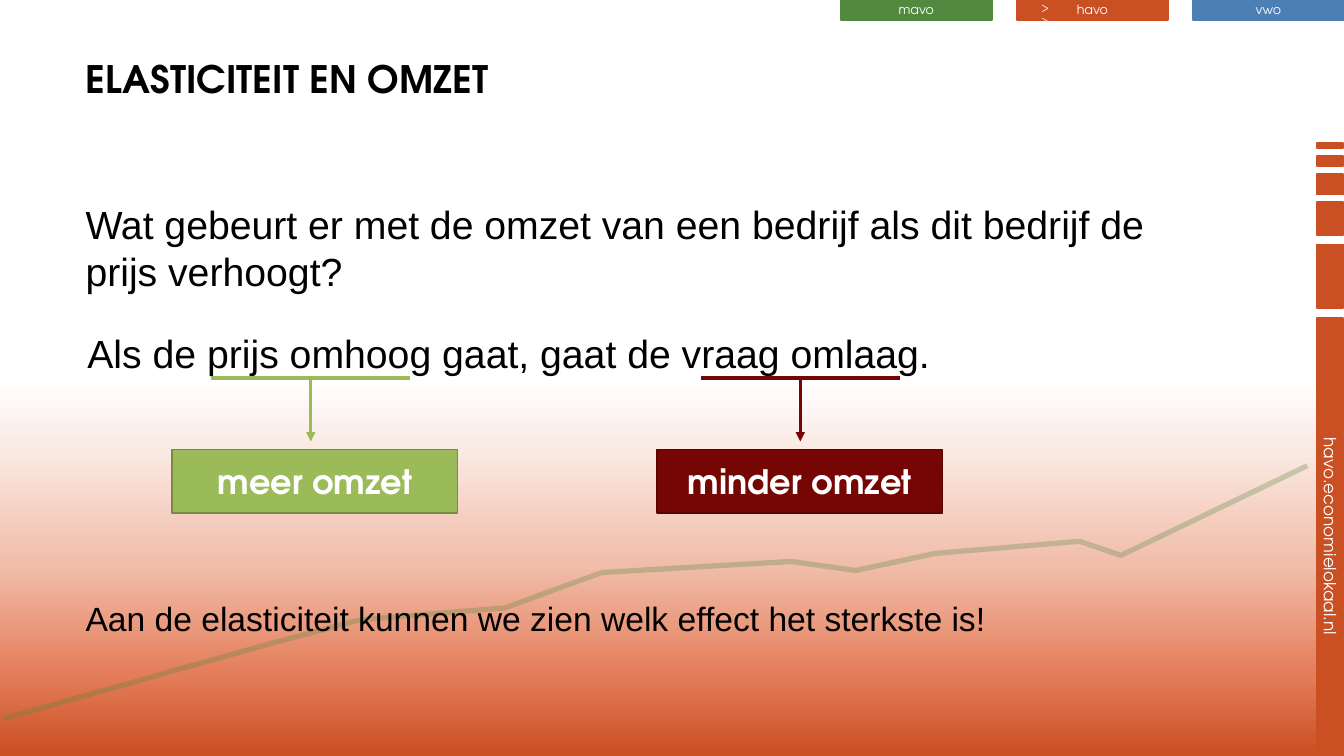
from lxml.etree import SubElement
from pptx import Presentation
from pptx.dml.color import RGBColor
from pptx.enum.shapes import MSO_CONNECTOR as Connector, MSO_SHAPE as Preset
from pptx.enum.text import MSO_ANCHOR as Anchor, PP_ALIGN as Align
from pptx.oxml.ns import qn
from pptx.util import Inches, Pt

BLACK = RGBColor(0x00, 0x00, 0x00)
WHITE = RGBColor(0xFF, 0xFF, 0xFF)
ORANGE = RGBColor(0xCA, 0x4F, 0x22)
BLUE = RGBColor(0x4C, 0x7F, 0xB4)
GREEN = RGBColor(0x52, 0x89, 0x3F)
LIME = RGBColor(0x9B, 0xBB, 0x59)
LIME_EDGE = RGBColor(0x79, 0x8A, 0x42)
MAROON = RGBColor(0x76, 0x06, 0x03)
MAROON_EDGE = RGBColor(0x57, 0x04, 0x02)
GRADIENT = [(0, ORANGE), (11, RGBColor(0xE4, 0x7E, 0x5A)),
            (25, RGBColor(0xF1, 0xBC, 0xA9)),
            (40, RGBColor(0xFA, 0xE8, 0xE2)), (50, WHITE)]

WIDTH, HEIGHT = Inches(13.33), Inches(7.5)
COLUMNS, ROWS = 40, 30
DISPLAY, BODY = "TeX Gyre Adventor", "Arial"
SLIM = {"margin_top": 0, "margin_bottom": Inches(0.01)}


class LessonSlide:
    """Places elements on a grid of 40 columns by 30 rows."""

    def __init__(self, slide):
        self.slide = slide
        self.shapes = slide.shapes

    def x(self, columns):
        return round(columns * WIDTH / COLUMNS)

    def y(self, rows):
        return round(rows * HEIGHT / ROWS)

    def box(self, left, top, width, height):
        return self.x(left), self.y(top), self.x(width), self.y(height)

    def background(self, stops):
        fill = self.slide.background.fill
        fill.gradient()
        fill.gradient_angle = 90
        stop_list = next(self.slide.element.iter(qn("a:gsLst")))
        for stop in list(stop_list):
            stop_list.remove(stop)
        for position, color in stops:
            stop = SubElement(stop_list, qn("a:gs"), pos=str(position * 1000))
            SubElement(stop, qn("a:srgbClr"), val=str(color))

    def label(self, shape, text, size, name=DISPLAY, color=WHITE, bold=False,
              align=Align.CENTER, anchor=Anchor.MIDDLE, margins=None):
        frame = shape.text_frame
        frame_format = {"word_wrap": True, "vertical_anchor": anchor}
        for key, value in {**frame_format, **(margins or {})}.items():
            setattr(frame, key, value)
        paragraph = frame.paragraphs[0]
        paragraph.alignment = align
        run = paragraph.add_run()
        run.text = text
        font_format = {"name": name, "size": Pt(size), "bold": bold}
        for key, value in font_format.items():
            setattr(run.font, key, value)
        run.font.color.rgb = color

    def text(self, place, text, size, **style):
        shape = self.shapes.add_textbox(*self.box(*place))
        settings = {"align": Align.LEFT, "anchor": Anchor.TOP, **style}
        self.label(shape, text, size, **settings)

    def block(self, place, color, edge=None, turned=False):
        left, top, width, height = self.box(*place)
        if turned:
            left, top = left + (width - height) // 2, top + (height - width) // 2
            width, height = height, width
        shape = self.shapes.add_shape(Preset.RECTANGLE, left, top, width, height)
        shape.rotation = 90 if turned else 0
        shape.shadow.inherit = False
        shape.fill.solid()
        shape.fill.fore_color.rgb = color
        self.stroke(shape.line, edge or color, 1.25)
        return shape

    def stroke(self, line, color, width):
        line.color.rgb = color
        line.width = Pt(width)

    def connector(self, start, end, color, arrow=False):
        line = self.shapes.add_connector(
            Connector.STRAIGHT, self.x(start[0]), self.y(start[1]),
            self.x(end[0]), self.y(end[1]))
        self.stroke(line.line, color, 2.25)
        properties = line.element.spPr
        if arrow:
            SubElement(properties.find(qn("a:ln")), qn("a:tailEnd"), type="triangle")
        SubElement(properties, qn("a:effectLst"))

    def trend(self, points, color, opacity):
        (start, *rest) = [(self.x(column), self.y(row)) for column, row in points]
        builder = self.shapes.build_freeform(*start)
        builder.add_line_segments(rest, close=False)
        shape = builder.convert_to_shape()
        shape.shadow.inherit = False
        shape.fill.background()
        self.stroke(shape.line, color, 3.75)
        tint = next(shape.element.spPr.iter(qn("a:srgbClr")))
        SubElement(tint, qn("a:alpha"), val=str(opacity * 1000))


def main():
    presentation = Presentation()
    presentation.slide_width, presentation.slide_height = WIDTH, HEIGHT
    slide = presentation.slides.add_slide(presentation.slide_layouts[6])
    lesson = LessonSlide(slide)
    lesson.background(GRADIENT)

    # School level tabs
    tabs = [("mavo", GREEN), ("havo", ORANGE), ("vwo", BLUE)]
    for index, (level, color) in enumerate(tabs):
        tab = lesson.block((25.02 + 5.24 * index, 0, 4.5, 0.8), color)
        lesson.label(tab, level, 9, margins=SLIM)

    # Side bars, growing downwards
    bars = [(5.66, 0.2), (6.2, 0.4), (6.92, 0.8), (8.02, 1.32),
            (9.7, 2.52), (12.62, 17.32)]
    for top, length in bars:
        bar = lesson.block((39.19, top, 0.78, length), ORANGE, turned=True)
    lesson.label(bar, "havo.economielokaal.nl", 12, margins=SLIM)

    # Trend line and marker of the current level
    lesson.trend([(38.91, 18.48), (33.36, 22.04), (32.13, 21.48),
                  (27.84, 21.96), (25.47, 22.64), (23.55, 22.28),
                  (17.91, 22.72), (15.03, 24.12), (10.71, 24.6),
                  (8.1, 25.52), (0.09, 28.52)], GREEN, 30)
    lesson.text((30.7, -0.16, 0.98, 0.92), ">>", 7.5)

    # Title and sentences
    lesson.text((2.25, 2, 30.06, 3.56), "ELASTICITEIT EN OMZET", 27,
                color=BLACK, bold=True)
    sentence = {"name": BODY, "color": BLACK}
    lesson.text((2.25, 7.76, 32.64, 4.72),
                "Wat gebeurt er met de omzet van een bedrijf als dit bedrijf "
                "de prijs verhoogt?", 28, **sentence)
    lesson.text((2.25, 12.88, 25.77, 2.84),
                "Als de prijs omhoog gaat, gaat de vraag omlaag.", 28,
                align=Align.CENTER, **sentence)
    lesson.text((2.25, 23.52, 33.57, 2.84),
                "Aan de elasticiteit kunnen we zien welk effect het sterkste is!",
                24, **sentence)

    # Underlined cause, arrow and effect on turnover
    effects = [("meer omzet", 5.13, 9.25, LIME, LIME_EDGE),
               ("minder omzet", 19.56, 23.82, MAROON, MAROON_EDGE)]
    for effect_name, left, middle, color, edge in effects:
        effect = lesson.block((left, 17.84, 8.49, 2.52), color, edge)
        lesson.label(effect, effect_name, 24, bold=True)
        lesson.connector((middle - 2.96, 15), (middle + 2.96, 15), color)
        lesson.connector((middle, 15), (middle, 17.52), color, arrow=True)

    presentation.save("out.pptx")


if __name__ == "__main__":
    main()
